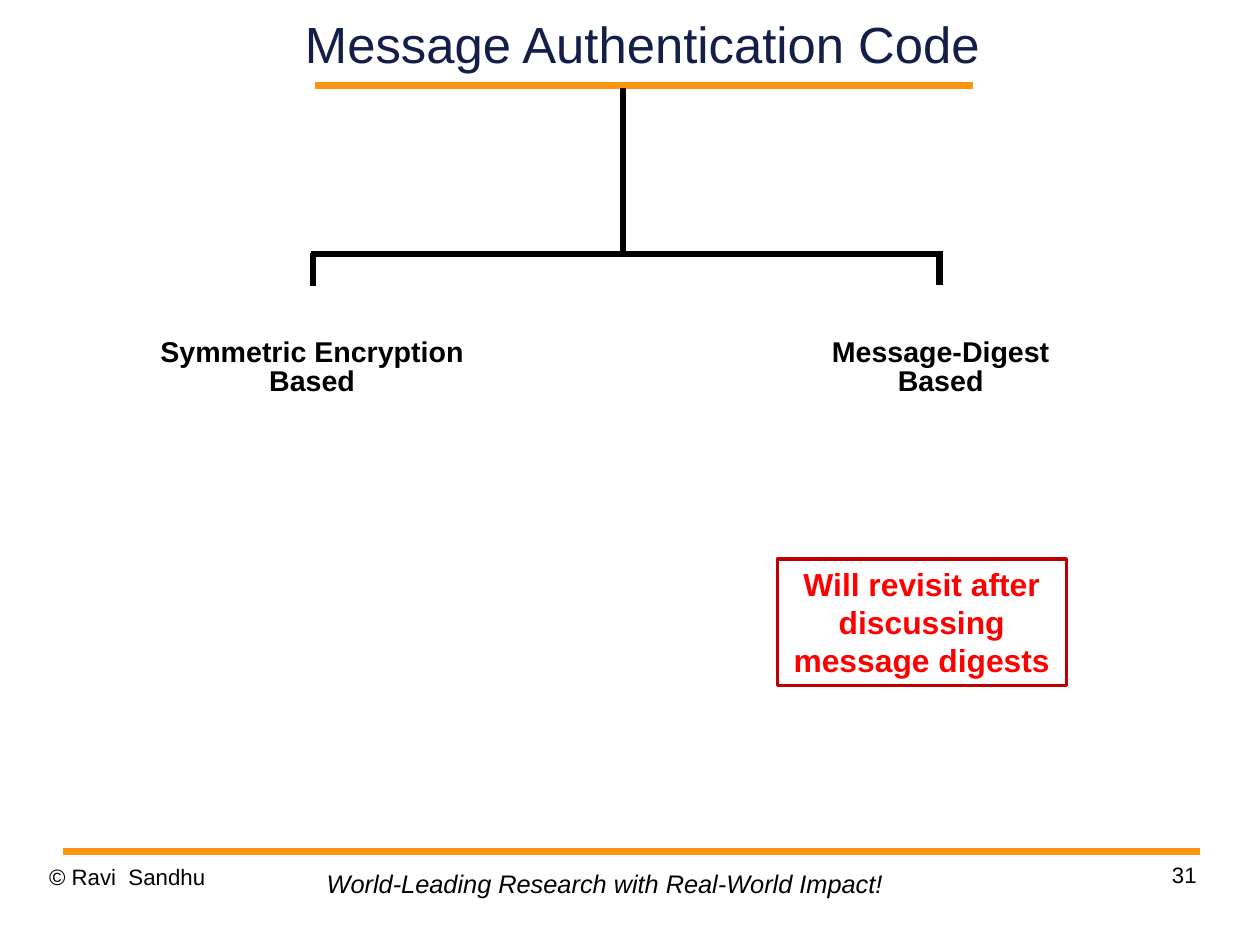
from pptx import Presentation
from pptx.dml.color import RGBColor
from pptx.enum.shapes import MSO_CONNECTOR as Conn, MSO_SHAPE as Shape
from pptx.enum.text import MSO_ANCHOR as Anchor, MSO_AUTO_SIZE as Auto, PP_ALIGN as Align
from pptx.util import Cm, Inches, Pt
from lxml.etree import SubElement
from pptx.oxml.ns import qn

BLACK = RGBColor(0, 0, 0)
NAVY = RGBColor(0x13, 0x1F, 0x49)
ORANGE = RGBColor(0xFF, 0x95, 0x0E)
RED = RGBColor(0xFF, 0, 0)
CRIMSON = RGBColor(0xC0, 0, 0)

WIDE, HIGH = Cm(28), Cm(21)
FOOT = 7.55
TREE = 2.22
LEFT, MID, RIGHT = 2.74, 5.45, 8.22
DROP = 0.29

NONE = (0, 0, 0, 0)
SLIM = (0.07, 0.03, 0.07, 0.03)
USUAL = (0.1, 0.05, 0.1, 0.05)

RULES = [(2.76, 0.75, 8.51, 0.75), (0.55, 7.45, 10.5, 7.45)]
BRANCHES = [
    (MID, 0.77, MID, TREE - 0.02),
    (LEFT - 0.02, TREE, RIGHT - 0.02, TREE),
    (LEFT, TREE - 0.01, LEFT, TREE - 0.01 + DROP),
    (RIGHT, TREE - 0.02, RIGHT, TREE - 0.02 + DROP),
]

# lines, box, insets, paragraph format, font format, frame format
TEXTS = [
    (["© Ravi  Sandhu"], (0.43, FOOT, 2.57, 0.57), NONE,
     {"line_spacing": 1.01}, {"size": Pt(14)}, {}),
    (["31"], (7.9, FOOT - 0.02, 2.57, 0.57), NONE,
     {"line_spacing": 1.01, "alignment": Align.RIGHT}, {"size": Pt(14)}, {}),
    (["World-Leading Research with Real-World Impact!"],
     (2.76, FOOT, 5.08, 0.37), USUAL,
     {}, {"size": Pt(16), "italic": True},
     {"word_wrap": False, "auto_size": Auto.SHAPE_TO_FIT_TEXT}),
    (["Message Authentication Code"], (2.41, 0, 6.43, 0.75), NONE,
     {"alignment": Align.CENTER}, {"size": Pt(32)},
     {"vertical_anchor": Anchor.MIDDLE}),
]
KINDS = [("Symmetric Encryption", 1.32, 2.82), ("Message-Digest", 7.2, 2.06)]
TEXTS += [
    ([kind, "Based"], (left, 2.93, wide, 0.58), SLIM,
     {"alignment": Align.CENTER, "line_spacing": 0.87},
     {"size": Pt(18), "bold": True},
     {"word_wrap": False, "auto_size": Auto.SHAPE_TO_FIT_TEXT})
    for kind, left, wide in KINDS
]
COLOURS = {"Message Authentication Code": NAVY}
NOTE = "Will revisit after discussing message digests"
NOTE_BOX = (6.8, 4.89, 2.53, 1.11)


def style(item, values):
    for name, value in values.items():
        setattr(item, name, value)


def draw(slide, ends, colour, width):
    line = slide.shapes.add_connector(Conn.STRAIGHT, *map(Inches, ends))
    line.line.color.rgb = colour
    line.line.width = Pt(width)
    SubElement(line._element.spPr, qn("a:effectLst"))


def write(frame, lines, insets, para, font, form, colour):
    style(frame, {"word_wrap": True, "vertical_anchor": Anchor.TOP, **form})
    sides = ("margin_left", "margin_top", "margin_right", "margin_bottom")
    style(frame, dict(zip(sides, map(Inches, insets))))
    for i, text in enumerate(lines):
        p = frame.add_paragraph() if i else frame.paragraphs[0]
        style(p, para)
        run = p.add_run()
        run.text = text
        style(run.font, {"name": "Arial", **font})
        run.font.color.rgb = colour


def main():
    deck = Presentation()
    deck.slide_width, deck.slide_height = WIDE, HIGH
    slide = deck.slides.add_slide(deck.slide_layouts[6])

    for ends in RULES:
        draw(slide, ends, ORANGE, 4.31)
    for lines, box, insets, para, font, form in TEXTS:
        frame = slide.shapes.add_textbox(*map(Inches, box)).text_frame
        write(frame, lines, insets, para, font, form, COLOURS.get(lines[0], BLACK))
    for ends in BRANCHES:
        draw(slide, ends, BLACK, 4)

    note = slide.shapes.add_shape(Shape.RECTANGLE, *map(Inches, NOTE_BOX))
    note.shadow.inherit = False
    note.fill.background()
    note.line.color.rgb = CRIMSON
    note.line.width = Pt(2)
    write(note.text_frame, [NOTE], USUAL, {"alignment": Align.CENTER},
          {"size": Pt(20), "bold": True}, {"auto_size": Auto.SHAPE_TO_FIT_TEXT}, RED)
    deck.save("out.pptx")


if __name__ == "__main__":
    main()
